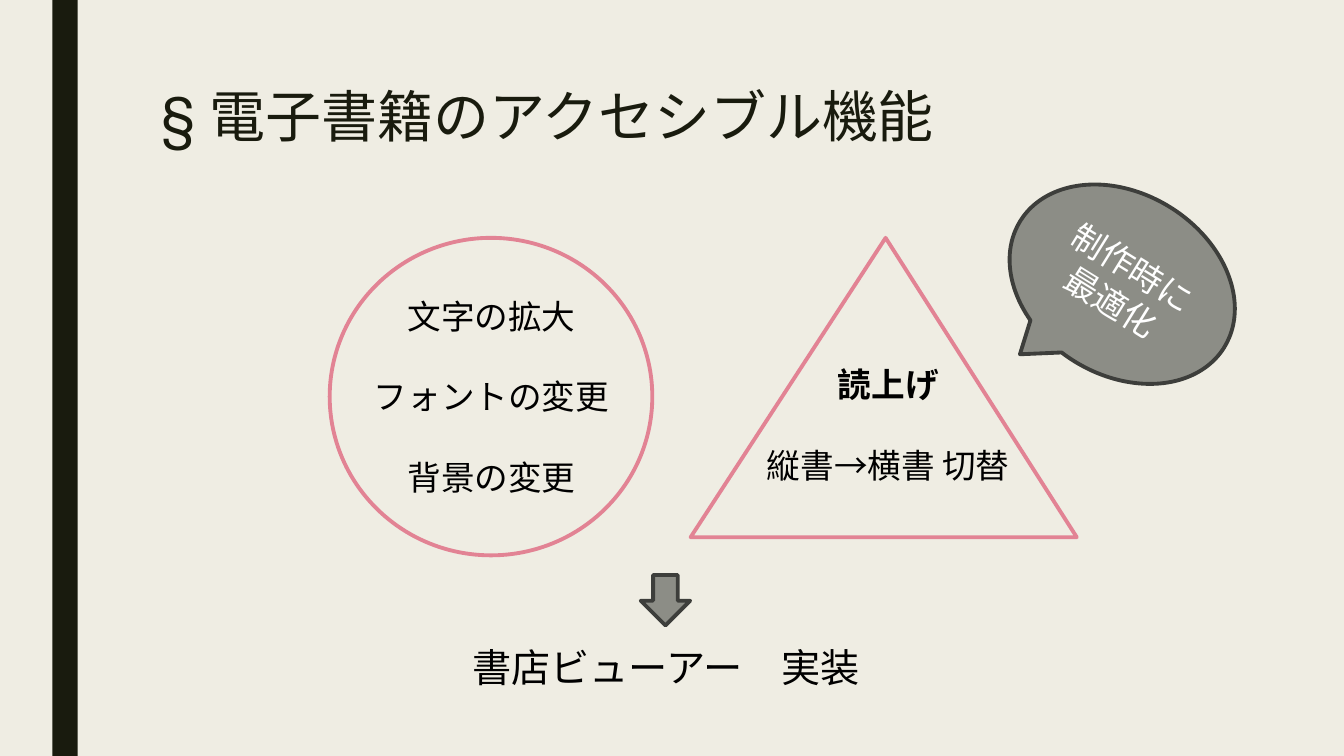
from pptx import Presentation, util as u
from pptx.dml.color import RGBColor
from pptx.enum import shapes, text
from lxml import etree

INK = RGBColor(0x19, 0x1B, 0x0E)
PAPER = RGBColor(0xEF, 0xED, 0xE3)
GRAY = RGBColor(0x8C, 0x8D, 0x86)
EDGE = RGBColor(0x3D, 0x3E, 0x3B)
PINK = RGBColor(0xE2, 0x83, 0x94)
BLACK = RGBColor(0, 0, 0)
WHITE = RGBColor(255, 255, 255)
CJK = "Noto Sans CJK JP"
KIND = shapes.MSO_SHAPE
NS = "{http://schemas.openxmlformats.org/drawingml/2006/main}"

deck = Presentation()
deck.slide_width, deck.slide_height = u.Inches(13.33), u.Inches(7.5)
slide = deck.slides.add_slide(deck.slide_layouts[6])
slide.background.fill.solid()
slide.background.fill.fore_color.rgb = PAPER


def draw(kind, box, fill=None, line=None, turn=0):
    shape = slide.shapes.add_shape(kind, *map(u.Inches, box))
    shape.shadow.inherit = False
    shape.rotation = turn
    if fill is None:
        shape.fill.background()
    else:
        shape.fill.solid()
        shape.fill.fore_color.rgb = fill
    if line is None:
        shape.line.fill.background()
    else:
        shape.line.color.rgb = line
        shape.line.width = u.Pt(2.75)
    return shape


def write(shape, words, size, pitch, color, font=CJK, gap=0, align=text.PP_ALIGN.CENTER):
    frame = shape.text_frame
    frame.word_wrap = True
    frame.text = words
    for par in frame.paragraphs:
        par.alignment = align
        par.line_spacing = u.Pt(pitch)
        par.space_after = u.Pt(gap)
        for run in par.runs:
            run.font.size = u.Pt(size)
            run.font.name = font
            run.font.color.rgb = color
            east = etree.SubElement(run.font._element, NS + "ea")
            east.set("typeface", CJK)
    return frame


# Side bar
draw(KIND.RECTANGLE, (0.52, 0, 0.25, 7.5), INK)

# Title
title = slide.shapes.add_textbox(*map(u.Inches, (1.5, 0.75, 10.5, 1.62)))
write(title, "§ 電子書籍のアクセシブル機能", 40, 49, INK, "Roboto", align=text.PP_ALIGN.LEFT)

# Circle, triangle and arrow
draw(KIND.OVAL, (3.27, 2.36, 3.2, 3.15), line=PINK)
peak = draw(KIND.ISOSCELES_TRIANGLE, (6.85, 2.36, 3.83, 2.97), line=PINK)
peak.adjustments[0] = 0.505
draw(KIND.RIGHT_ARROW, (6.35, 5.71, 0.5, 0.49), GRAY, EDGE, 90)

# Labels: box, words, size, line pitch, gap
labels = [
    ((3.37, 2.88, 3.01, 2.1), "文字の拡大\nフォントの変更\n背景の変更", 24, 29, 28.5),
    ((7.01, 3.56, 3.6, 1.31), "読上げ\n縦書→横書 切替", 24, 29, 28.5),
    ((3.27, 6.33, 6.67, 0.57), "書店ビューアー　実装", 28, 34, 0),
]
for box, words, size, pitch, gap in labels:
    label = slide.shapes.add_textbox(*map(u.Inches, box))
    frame = write(label, words, size, pitch, BLACK, gap=gap)
    if words.startswith("読上げ"):
        frame.paragraphs[0].runs[0].font.bold = True

# Callout
note = draw(KIND.OVAL_CALLOUT, (9.94, 1.92, 2.38, 1.8), GRAY, EDGE, 31.8)
frame = write(note, "制作時に\n最適化", 24, 29, WHITE, "Roboto")
frame.vertical_anchor = text.MSO_ANCHOR.MIDDLE

deck.save("out.pptx")
